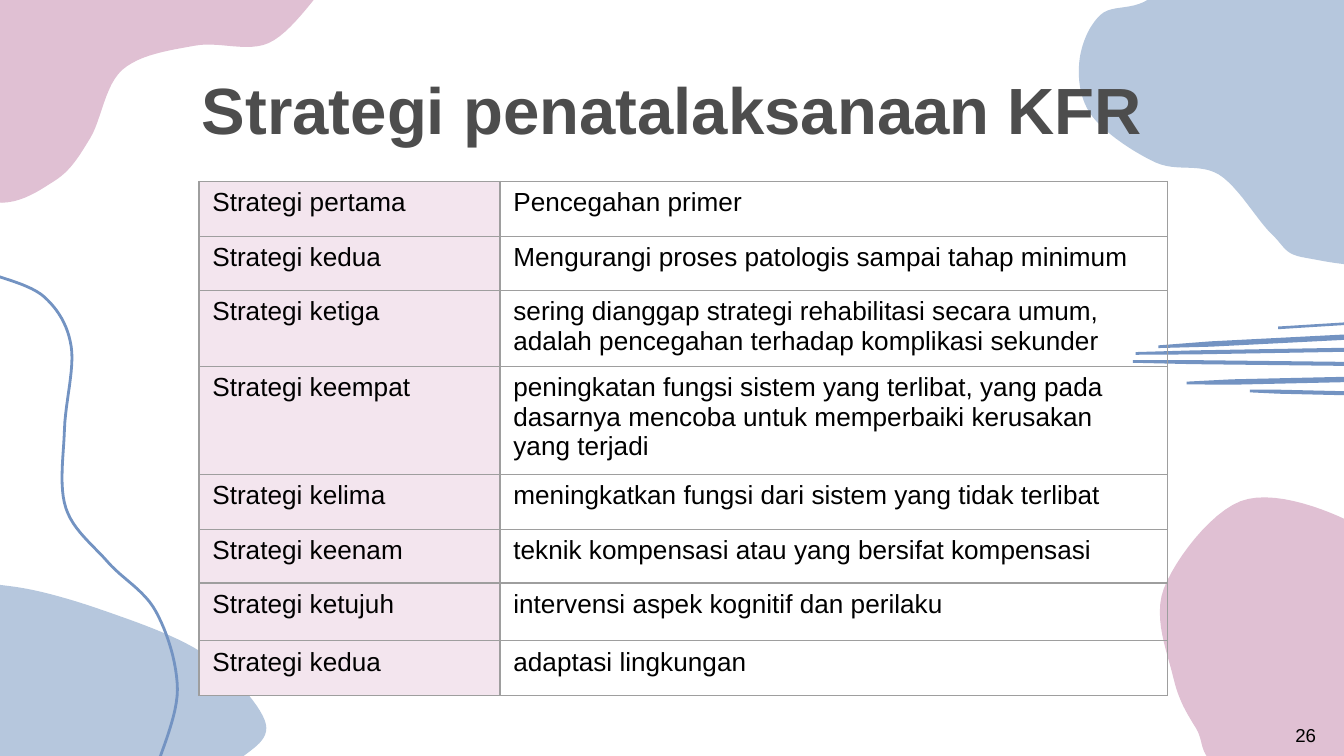
from dataclasses import dataclass

from pptx import Presentation
from pptx.dml.color import RGBColor
from pptx.enum.text import MSO_ANCHOR, PP_ALIGN
from pptx.oxml import parse_xml
from pptx.oxml.ns import nsdecls
from pptx.util import Emu, Pt

SCALE = 9144
STEPS = 12
Point = tuple[float, float]

PINK, PALE_PINK, BLUE, DARK_BLUE = "E0C0D3", "F3E5EE", "B6C7DD", "7393C2"
GREY, BLACK, BORDER = "4D4D4D", "000000", "9E9E9E"


@dataclass(frozen=True)
class Curve:
    colour: str
    anchors: list[Point]
    looped: bool = False
    filled: bool = True


@dataclass(frozen=True)
class Stroke:
    left: int
    left_y: int
    right: int
    right_y: int
    thickness: int


@dataclass(frozen=True)
class Label:
    text: str
    box: tuple[int, int, int, int]
    margin: int
    anchor: MSO_ANCHOR
    font: dict


@dataclass(frozen=True)
class Strategy:
    name: str
    detail: str
    height: int = 41


CURVES = [
    Curve(PINK, [(-91, -9), (-79, 110), (-8, 150), (40, 135), (67, 103), (91, 52),
                 (145, 34), (200, 32), (241, -9)]),
    Curve(PINK, [(1037, 575), (915, 572), (890, 542), (873, 504), (866, 438), (923, 373),
                 (1000, 386), (1039, 427), (1158, 412), (1211, 471), (1172, 508)], True),
    Curve(BLUE, [(-157, 502), (-185, 569), (-117, 622), (140, 579), (182, 562), (197, 536),
                 (154, 488), (82, 456), (6, 436), (-60, 440)], True),
    Curve(DARK_BLUE, [(-6, 204), (33, 221), (53, 258), (48, 319), (49, 378), (80, 418),
                      (116, 455), (132, 513), (117, 570)], filled=False),
    Curve(BLUE, [(1048, 191), (972, 192), (946, 174), (907, 130), (860, 121), (813, 87),
                 (803, 47), (819, 11), (858, -3), (903, -61), (977, -93), (1034, -36),
                 (1120, -34), (1157, 62), (1129, 118)], True),
]

STROKES = [
    Stroke(930, 291, 1016, 293, 3),
    Stroke(883, 285, 1017, 282, 4),
    Stroke(843, 269, 1018, 271, 3),
    Stroke(845, 263, 1018, 260, 3),
    Stroke(862, 258, 1018, 250, 4),
    Stroke(951, 244, 1015, 240, 2),
]

TITLE = Label("Strategi penatalaksanaan KFR", (79, 49, 843, 63), 10, MSO_ANCHOR.MIDDLE,
              {"name": "Arial", "size": Pt(35), "bold": True, "colour": GREY})
NUMBER = Label("26", (950, 534, 43, 35), 5, MSO_ANCHOR.TOP,
               {"name": "Arial", "size": Pt(10), "bold": False, "colour": BLACK})

CELL_FONT = {"name": "Arial", "size": Pt(14), "bold": False, "colour": BLACK}
COLUMN_WIDTHS = (224, 497)
STRATEGIES = [
    Strategy("Strategi pertama", "Pencegahan primer"),
    Strategy("Strategi kedua", "Mengurangi proses patologis sampai tahap minimum", 40),
    Strategy("Strategi ketiga", "sering dianggap strategi rehabilitasi secara umum, "
             "adalah pencegahan terhadap komplikasi sekunder"),
    Strategy("Strategi keempat", "peningkatan fungsi sistem yang terlibat, yang pada "
             "dasarnya mencoba untuk memperbaiki kerusakan yang terjadi"),
    Strategy("Strategi kelima", "meningkatkan fungsi dari sistem yang tidak terlibat"),
    Strategy("Strategi keenam", "teknik kompensasi atau yang bersifat kompensasi", 40),
    Strategy("Strategi ketujuh", "intervensi aspek kognitif dan perilaku", 43),
    Strategy("Strategi kedua", "adaptasi lingkungan"),
]


def px(length: float) -> Emu:
    return Emu(round(length * SCALE))


def rgb(colour: str) -> RGBColor:
    return RGBColor.from_string(colour)


def smooth_outline(anchors: list[Point], looped: bool) -> list[Point]:
    if looped:
        guides = [anchors[-1], *anchors, *anchors[:2]]
    else:
        guides = [anchors[0], *anchors, anchors[-1]]
    outline = [anchors[0]]
    for before, start, end, after in zip(guides, guides[1:], guides[2:], guides[3:]):
        for step in range(1, STEPS + 1):
            t = step / STEPS
            outline.append(tuple(
                b + t * (c - a) / 2 + t ** 2 * (a - 2.5 * b + 2 * c - d / 2)
                + t ** 3 * (3 * b - a - 3 * c + d) / 2
                for a, b, c, d in zip(before, start, end, after)))
    return outline


def stroke_outline(stroke: Stroke) -> list[Point]:
    half = stroke.thickness / 2
    shoulder = stroke.left + (stroke.right - stroke.left) / 4
    shoulder_y = stroke.left_y + (stroke.right_y - stroke.left_y) / 4
    return [(stroke.left, stroke.left_y - 1), (shoulder, shoulder_y - half),
            (stroke.right, stroke.right_y - half), (stroke.right, stroke.right_y + half),
            (shoulder, shoulder_y + half), (stroke.left, stroke.left_y + 1)]


def draw_outline(page, outline: list[Point], colour: str, filled: bool = True) -> None:
    corners = [(px(x), px(y)) for x, y in outline]
    builder = page.shapes.build_freeform(*corners[0])
    builder.add_line_segments(corners[1:], close=filled)
    shape = builder.convert_to_shape()
    shape.shadow.inherit = False
    if filled:
        shape.fill.solid()
        shape.fill.fore_color.rgb = rgb(colour)
        shape.line.fill.background()
    else:
        shape.fill.background()
        shape.line.color.rgb = rgb(colour)
        shape.line.width = Pt(1.5)


def write(frame, text: str, font: dict, alignment: PP_ALIGN) -> None:
    para = frame.paragraphs[0]
    para.alignment = alignment
    span = para.add_run()
    span.text = text
    for name, value in font.items():
        if name == "colour":
            span.font.color.rgb = rgb(value)
        else:
            setattr(span.font, name, value)


def draw_label(page, label: Label) -> None:
    box = page.shapes.add_textbox(*map(px, label.box))
    frame = box.text_frame
    layout = {"word_wrap": True, "vertical_anchor": label.anchor,
              "margin_left": px(10), "margin_right": px(10),
              "margin_top": px(label.margin), "margin_bottom": px(label.margin)}
    for name, value in layout.items():
        setattr(frame, name, value)
    write(frame, label.text, label.font, PP_ALIGN.CENTER)


def add_borders(cell) -> None:
    properties = cell._tc.get_or_add_tcPr()
    for place, side in enumerate(("lnL", "lnR", "lnT", "lnB")):
        properties.insert(place, parse_xml(
            f'<a:{side} {nsdecls("a")} w="{Pt(0.75)}"><a:solidFill>'
            f'<a:srgbClr val="{BORDER}"/></a:solidFill></a:{side}>'))


def draw_strategies(page, strategies: list[Strategy]) -> None:
    height = sum(strategy.height for strategy in strategies)
    table = page.shapes.add_table(len(strategies), len(COLUMN_WIDTHS), px(148), px(135),
                                  px(sum(COLUMN_WIDTHS)), px(height)).table
    table.first_row = table.horz_banding = False
    for column, width in zip(table.columns, COLUMN_WIDTHS):
        column.width = px(width)
    for row, strategy in zip(table.rows, strategies):
        row.height = px(strategy.height)
        name_cell, detail_cell = row.cells
        name_cell.fill.solid()
        name_cell.fill.fore_color.rgb = rgb(PALE_PINK)
        detail_cell.fill.background()
        for cell, text in ((name_cell, strategy.name), (detail_cell, strategy.detail)):
            write(cell.text_frame, text, CELL_FONT, PP_ALIGN.LEFT)
            add_borders(cell)


def main() -> None:
    deck = Presentation()
    deck.slide_width, deck.slide_height = px(1000), px(562.5)
    page = deck.slides.add_slide(deck.slide_layouts[6])
    for curve in CURVES:
        draw_outline(page, smooth_outline(curve.anchors, curve.looped),
                     curve.colour, curve.filled)
    for stroke in STROKES:
        draw_outline(page, stroke_outline(stroke), DARK_BLUE)
    draw_label(page, TITLE)
    draw_strategies(page, STRATEGIES)
    draw_label(page, NUMBER)
    deck.save("out.pptx")


if __name__ == "__main__":
    main()
